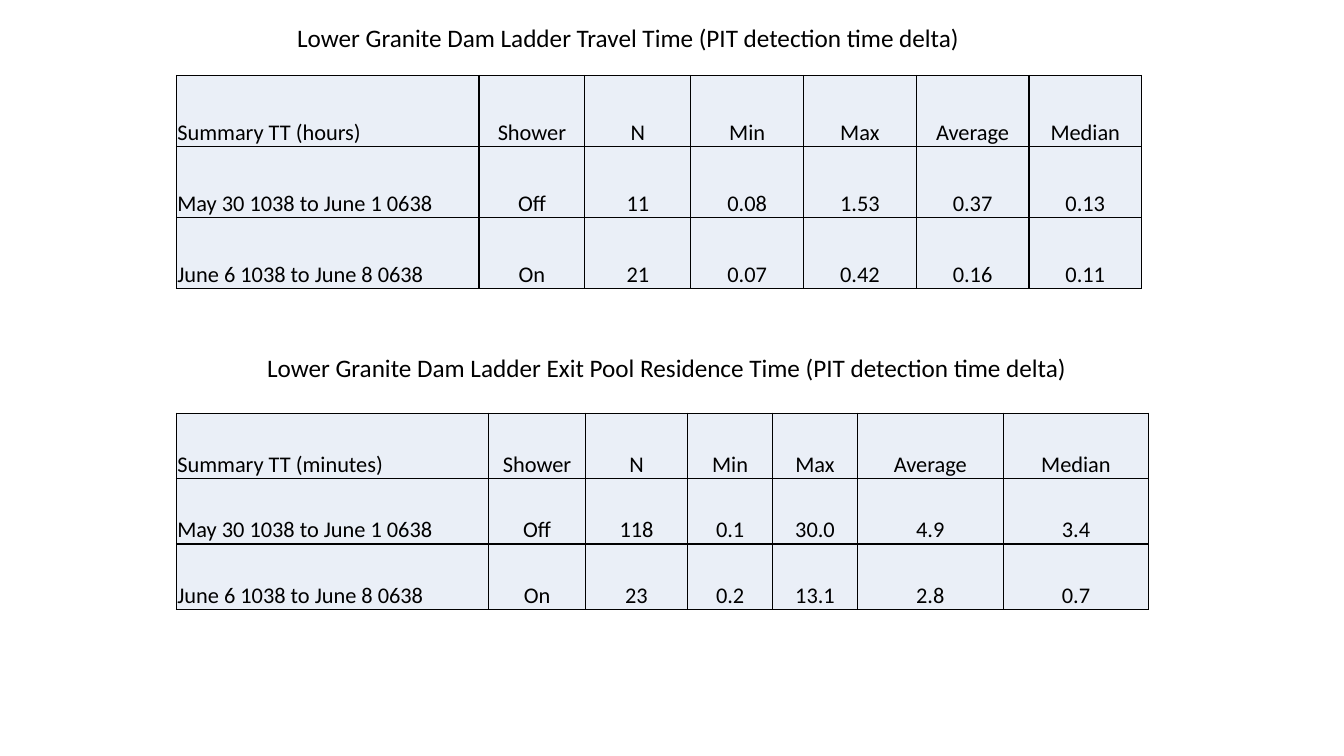
from dataclasses import dataclass

from lxml import etree
from pptx import Presentation
from pptx.dml.color import RGBColor
from pptx.enum.text import MSO_ANCHOR, MSO_AUTO_SIZE, PP_ALIGN
from pptx.oxml.ns import qn
from pptx.util import Cm, Pt

BOTTOM = MSO_ANCHOR.BOTTOM
GROW = MSO_AUTO_SIZE.SHAPE_TO_FIT_TEXT
LEFT, CENTER = PP_ALIGN.LEFT, PP_ALIGN.CENTER


@dataclass(frozen=True)
class Theme:
    font: str = "Calibri"
    ink: str = "000000"
    cell: str = "EAEFF7"
    title_size: int = 18
    cell_size: int = 16
    border: int = 1


@dataclass(frozen=True)
class Box:
    left: float
    top: float
    width: float
    height: float


THEME = Theme()
TITLE_HEIGHT = 1.03
CELL_INSET = 0.02
STATISTICS = ["Shower", "N", "Min", "Max", "Average", "Median"]
BEFORE, AFTER = "May 30 1038 to June 1 0638", "June 6 1038 to June 8 0638"


def style_text(paragraph, size, alignment=LEFT):
    paragraph.alignment = alignment
    for run in paragraph.runs:
        run.font.name = THEME.font
        run.font.size = Pt(size)
        run.font.color.rgb = RGBColor.from_string(THEME.ink)


def add_borders(cell):
    properties = cell._tc.get_or_add_tcPr()
    for side in ("a:lnL", "a:lnR", "a:lnT", "a:lnB"):
        line = etree.SubElement(properties, qn(side), w=str(Pt(THEME.border)))
        fill = etree.SubElement(line, qn("a:solidFill"))
        etree.SubElement(fill, qn("a:srgbClr"), val=THEME.ink)


def fill_cell(cell, text, alignment):
    cell.text_frame.text = text
    style_text(cell.text_frame.paragraphs[0], THEME.cell_size, alignment)
    cell.vertical_anchor = BOTTOM
    cell.margin_left = cell.margin_right = cell.margin_top = Cm(CELL_INSET)
    cell.margin_bottom = 0
    # Borders must precede the fill in the cell properties
    add_borders(cell)
    cell.fill.solid()
    cell.fill.fore_color.rgb = RGBColor.from_string(THEME.cell)


def add_summary_table(slide, box, column_widths, rows):
    summary = slide.shapes.add_table(
        len(rows), len(column_widths),
        Cm(box.left), Cm(box.top), Cm(box.width), Cm(box.height)).table
    for column, width in zip(summary.columns, column_widths):
        column.width = Cm(width)
    for r, values in enumerate(rows):
        summary.rows[r].height = Cm(box.height / len(rows))
        for c, value in enumerate(values):
            fill_cell(summary.cell(r, c), value, CENTER if c else LEFT)


def add_section(slide, box, title, title_indent, title_width, table_drop,
                column_widths, rows):
    # Section title
    heading = slide.shapes.add_textbox(
        Cm(box.left + title_indent), Cm(box.top),
        Cm(title_width), Cm(TITLE_HEIGHT)).text_frame
    heading.word_wrap = True
    heading.auto_size = GROW
    heading.text = title
    style_text(heading.paragraphs[0], THEME.title_size)

    # Table fills the rest of the box
    table_box = Box(box.left, box.top + table_drop,
                    box.width, box.height - table_drop)
    add_summary_table(slide, table_box, column_widths, rows)


def main():
    deck = Presentation()
    deck.slide_width, deck.slide_height = Cm(33.87), Cm(19.05)
    slide = deck.slides.add_slide(deck.slide_layouts[6])

    # Ladder travel time, in hours
    add_section(
        slide, Box(4.45, 0.43, 24.3, 6.84),
        "Lower Granite Dam Ladder Travel Time (PIT detection time delta)",
        title_indent=2.79, title_width=19.43, table_drop=1.47,
        column_widths=[7.62] + [2.67] * 2 + [2.84] * 4,
        rows=[
            ["Summary TT (hours)", *STATISTICS],
            [BEFORE, "Off", "11", "0.08", "1.53", "0.37", "0.13"],
            [AFTER, "On", "21", "0.07", "0.42", "0.16", "0.11"],
        ])

    # Exit pool residence time, in minutes
    add_section(
        slide, Box(4.45, 8.76, 24.5, 6.6),
        "Lower Granite Dam Ladder Exit Pool Residence Time "
        "(PIT detection time delta)",
        title_indent=2.03, title_width=21.49, table_drop=1.65,
        column_widths=[7.87, 2.43, 2.58] + [2.14] * 2 + [3.67] * 2,
        rows=[
            ["Summary TT (minutes)", *STATISTICS],
            [BEFORE, "Off", "118", "0.1", "30.0", "4.9", "3.4"],
            [AFTER, "On", "23", "0.2", "13.1", "2.8", "0.7"],
        ])

    deck.save("out.pptx")


if __name__ == "__main__":
    main()
